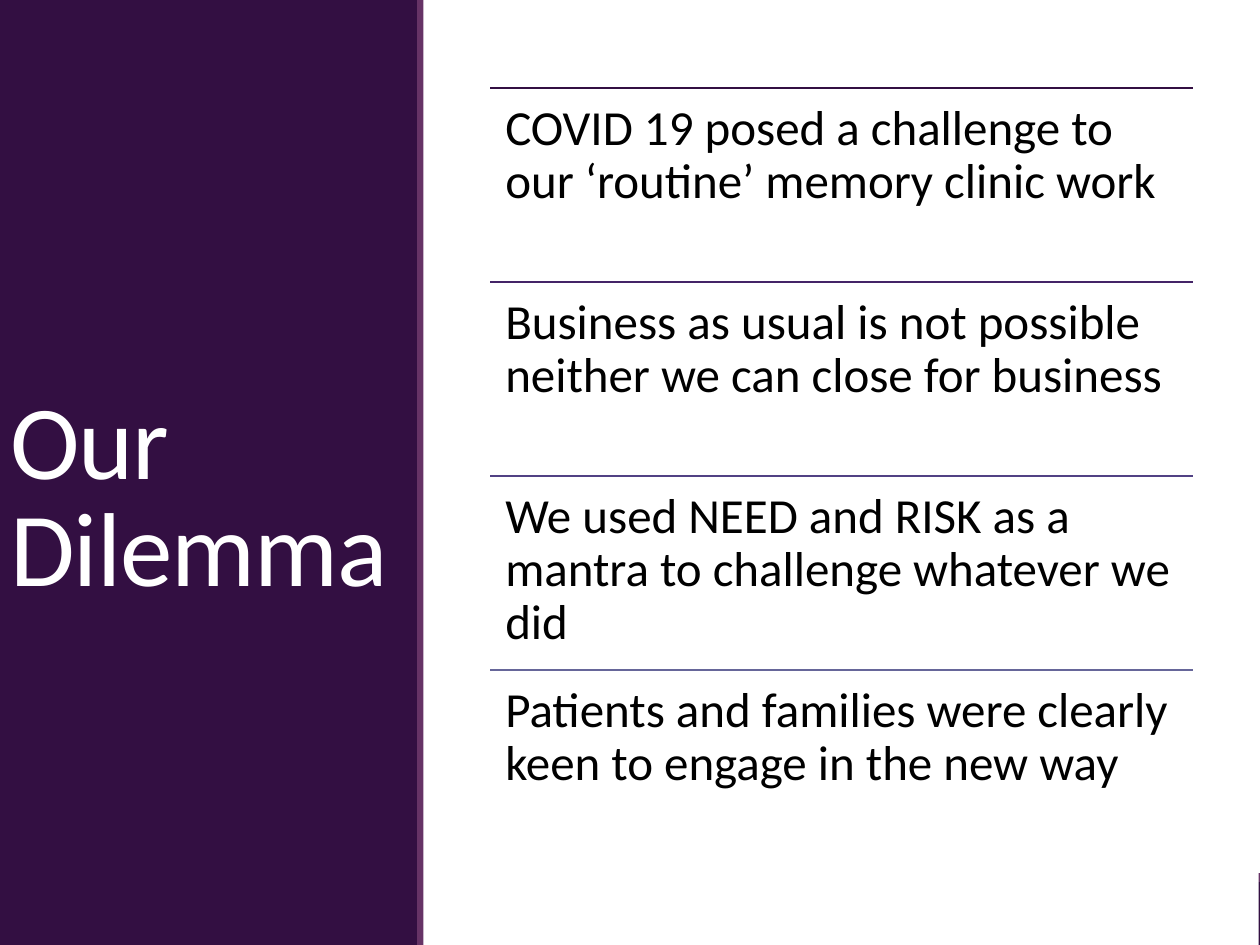
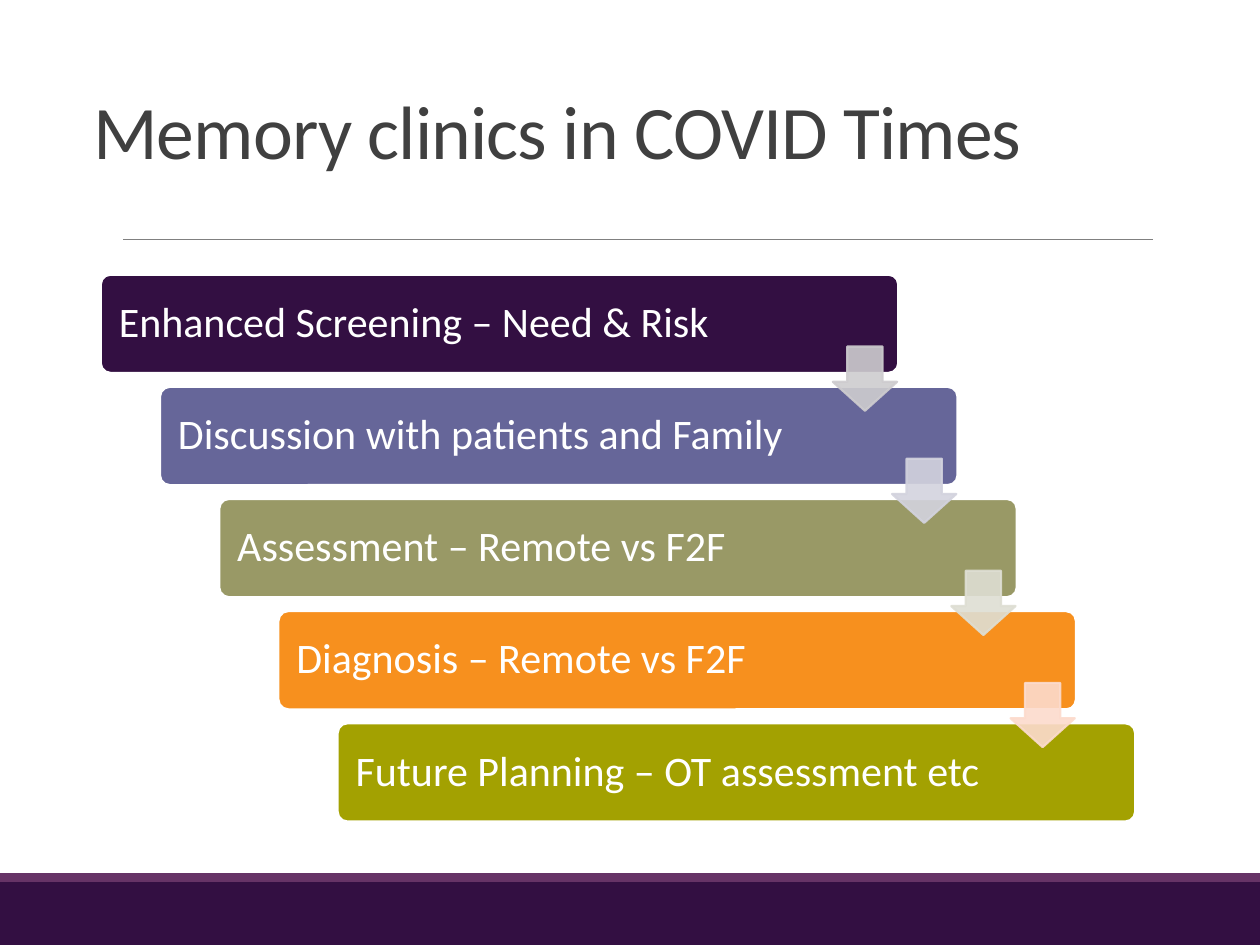
from dataclasses import dataclass

from lxml import etree
from pptx import Presentation
from pptx.dml.color import RGBColor
from pptx.enum import shapes, text
from pptx.oxml.ns import qn
from pptx.util import Inches, Pt


@dataclass(frozen=True)
class Theme:
    font: str = "Calibri"
    white: str = "FFFFFF"
    black: str = "000000"
    plum: str = "330F42"
    mauve: str = "663366"
    title_grey: str = "404040"
    rule_grey: str = "808080"
    rules: tuple = ("330F42", "442467", "514184", "666699")
    steps: tuple = ("330F42", "666699", "999966", "F7901E", "A3A101")
    arrows: tuple = ("CECCCF", "D3D3DE", "DEDED3", "FCDBCD")
    side_title_size: float = 60
    title_size: float = 43.2
    point_size: float = 28
    step_size: float = 24
    outline: float = 1.25


class Deck:
    def __init__(self, theme):
        self.theme = theme
        self.presentation = Presentation()
        self.presentation.slide_width = Inches(10)
        self.presentation.slide_height = Inches(7.5)
        self.slide = None

    def new_slide(self):
        """Add a blank slide with the footer bands that all slides share."""
        self.slide = self.presentation.slides.add_slide(self.presentation.slide_layouts[6])
        self.shape(0, 7, 10, 0.5, self.theme.plum)
        self.shape(0, 6.93, 10, 0.07, self.theme.mauve)

    def shape(self, left, top, width, height, fill, kind=shapes.MSO_SHAPE.RECTANGLE,
              line=None, adjustments=(), opacity=None):
        shape = self.slide.shapes.add_shape(
            kind, Inches(left), Inches(top), Inches(width), Inches(height))
        shape.shadow.inherit = False
        for index, value in enumerate(adjustments):
            shape.adjustments[index] = value
        shape.fill.solid()
        shape.fill.fore_color.rgb = RGBColor.from_string(fill)
        if line:
            shape.line.color.rgb = RGBColor.from_string(line)
            shape.line.width = Pt(self.theme.outline)
        else:
            shape.line.fill.background()
        if opacity is not None:
            for color in shape.element.spPr.iter(qn("a:srgbClr")):
                etree.SubElement(color, qn("a:alpha"), val=str(opacity * 1000))
        return shape

    def rule(self, left, right, top, color, width):
        connector = self.slide.shapes.add_connector(
            shapes.MSO_CONNECTOR.STRAIGHT, Inches(left), Inches(top), Inches(right), Inches(top))
        connector.line.color.rgb = RGBColor.from_string(color)
        connector.line.width = Pt(width)
        etree.SubElement(connector.element.spPr, qn("a:effectLst"))

    def set_text(self, shape, words, size, color, inset, anchor=text.MSO_ANCHOR.MIDDLE,
                 line_spacing=0.9):
        """Fill a shape with one left-aligned paragraph; inset is (sides, top and bottom)."""
        side, edge = (Inches(length) for length in inset)
        frame = shape.text_frame
        paragraph = frame.paragraphs[0]
        run = paragraph.add_run()
        formats = (
            (frame, {"word_wrap": True, "vertical_anchor": anchor, "margin_left": side,
                     "margin_right": side, "margin_top": edge, "margin_bottom": edge}),
            (paragraph, {"alignment": text.PP_ALIGN.LEFT, "line_spacing": line_spacing}),
            (run, {"text": words}),
            (run.font, {"name": self.theme.font, "size": Pt(size)}),
        )
        for target, values in formats:
            for name, value in values.items():
                setattr(target, name, value)
        run.font.color.rgb = RGBColor.from_string(color)

    def text_box(self, left, top, width, height, *content, **style):
        box = self.slide.shapes.add_textbox(
            Inches(left), Inches(top), Inches(width), Inches(height))
        self.set_text(box, *content, **style)
        return box

    def title(self, left, top, width, height, words, size, color, anchor):
        """Add a title with slightly tightened letter spacing."""
        box = self.text_box(left, top, width, height, words, size, color, (0.08, 0),
                            anchor=anchor, line_spacing=0.85)
        for properties in box.element.iter(qn("a:rPr")):
            properties.set("spc", "-50")


def add_dilemma(deck):
    theme = deck.theme
    deck.new_slide()
    deck.shape(0, 0, 9.99, 7.5, theme.white)
    deck.shape(0, 0, 3.32, 7.5, theme.plum)
    deck.title(0, 0.82, 3.31, 6.31, "Our Dilemma", theme.side_title_size,
               theme.white, text.MSO_ANCHOR.MIDDLE)
    points = (
        "COVID 19 posed a challenge to our ‘routine’ memory clinic work",
        "Business as usual is not possible neither we can close for business",
        "We used NEED and RISK as a mantra to challenge whatever we did",
        "Patients and families were clearly keen to engage in the new way",
    )
    left, width, row_height = 3.89, 5.58, 1.54
    for row, (point, color) in enumerate(zip(points, theme.rules)):
        top = 0.7 + row * row_height
        deck.rule(left, left + width, top, color, theme.outline)
        deck.text_box(left, top, width, row_height, point, theme.point_size, theme.black,
                      (0.12, 0.12), anchor=text.MSO_ANCHOR.TOP)
    deck.shape(3.31, 0, 0.05, 7.5, theme.mauve)


def add_clinic_steps(deck):
    theme = deck.theme
    deck.new_slide()
    deck.rule(0.98, 9.15, 1.9, theme.rule_grey, 0.5)
    deck.title(0.66, 0.22, 8.25, 1.17, "Memory clinics in COVID Times", theme.title_size,
               theme.title_grey, text.MSO_ANCHOR.BOTTOM)
    steps = (
        "Enhanced Screening – Need & Risk",
        "Discussion with patients and Family",
        "Assessment – Remote vs F2F",
        "Diagnosis – Remote vs F2F",
        "Future Planning – OT assessment etc",
    )
    shift, drop = 0.47, 0.89
    for index, (step, color) in enumerate(zip(steps, theme.steps)):
        bar = deck.shape(0.8 + index * shift, 2.18 + index * drop, 6.33, 0.78, color,
                         shapes.MSO_SHAPE.ROUNDED_RECTANGLE, theme.white, (0.1,))
        deck.set_text(bar, step, theme.step_size, theme.white, (0.12, 0.1))
    for index, color in enumerate(theme.arrows):
        deck.shape(6.61 + index * shift, 2.75 + index * drop, 0.51, 0.51, color,
                   shapes.MSO_SHAPE.DOWN_ARROW, color, (0.55, 0.45), opacity=90)


def main():
    deck = Deck(Theme())
    add_dilemma(deck)
    add_clinic_steps(deck)
    deck.presentation.save("out.pptx")


if __name__ == "__main__":
    main()
